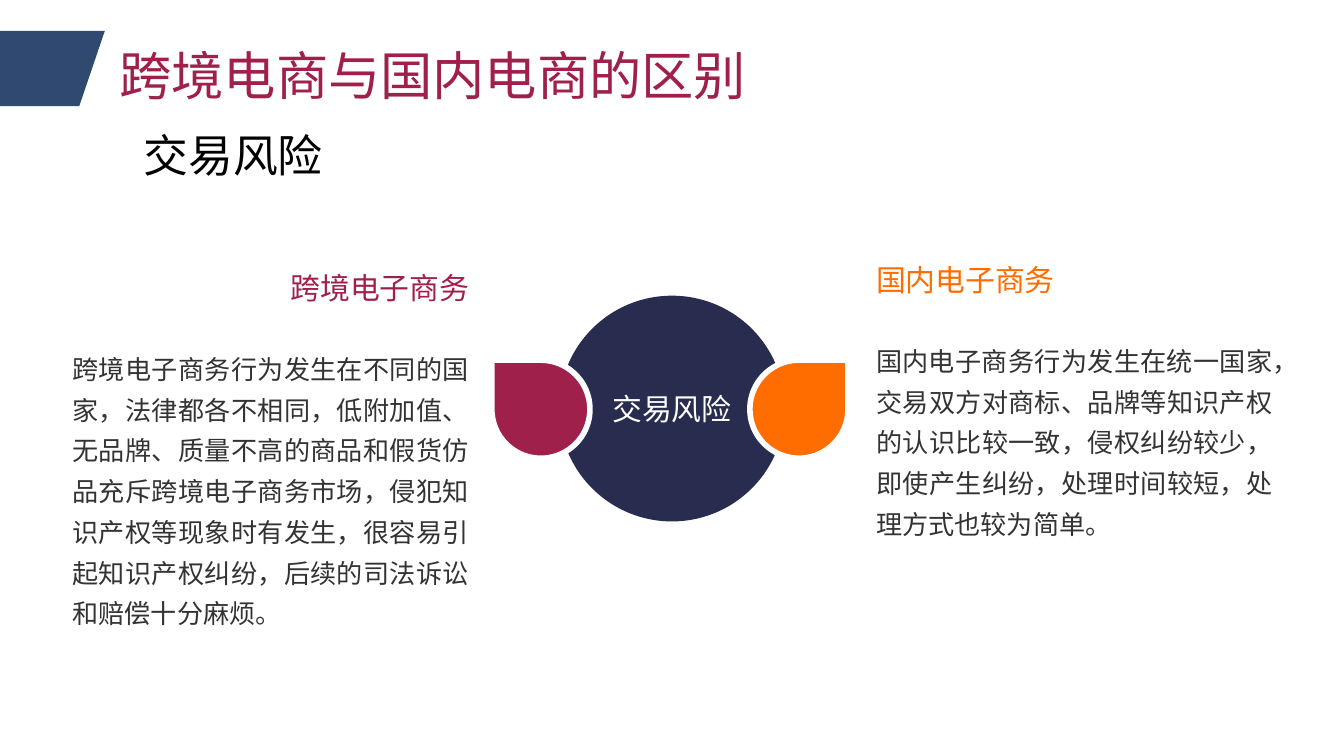
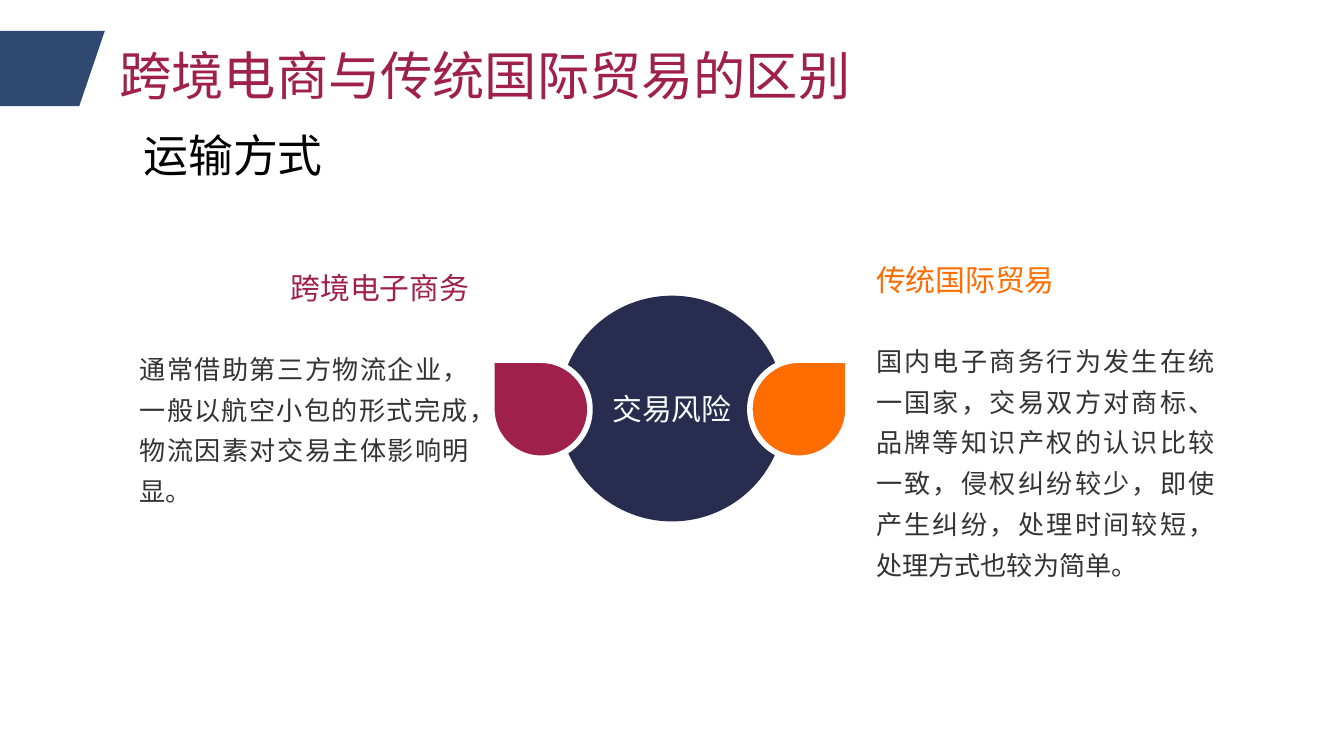
from lxml import etree
from pptx import Presentation
from pptx.dml.color import RGBColor
from pptx.enum import shapes, text
from pptx.oxml import ns
from pptx.util import Inches, Pt

FONT = "Noto Sans CJK SC"
STEEL, NAVY, RED, ORANGE = "304971", "282D4F", "A0204C", "FF6C00"
WHITE, BLACK, GREY = "FFFFFF", "000000", "333333"
ALIGN = text.PP_ALIGN

CROSS_BORDER = "跨境电子商务"
DOMESTIC_RISK = ("国内电子商务行为发生在统一国家，交易双方对商标、品牌等知识产权的认识比较一致，"
                 "侵权纠纷较少，即使产生纠纷，处理时间较短，处理方式也较为简单。")
CROSS_BORDER_RISK = ("跨境电子商务行为发生在不同的国家，法律都各不相同，低附加值、无品牌、"
                     "质量不高的商品和假货仿品充斥跨境电子商务市场，侵犯知识产权等现象时有发生，"
                     "很容易引起知识产权纠纷，后续的司法诉讼和赔偿十分麻烦。")
CROSS_BORDER_SHIPPING = "通常借助第三方物流企业，一般以航空小包的形式完成，物流因素对交易主体影响明显。"

# Each column: heading, body, body width, body height
SLIDES = [
    dict(title="跨境电商与国内电商的区别", title_w=5.6, subtitle="交易风险",
         left=(CROSS_BORDER, CROSS_BORDER_RISK, 3.15, 2.24),
         right=("国内电子商务", DOMESTIC_RISK, 3.15, 1.63)),
    dict(title="跨境电商与传统国际贸易的区别", title_w=6.56, subtitle="运输方式",
         left=(CROSS_BORDER, CROSS_BORDER_SHIPPING, 2.65, 1.32),
         right=("传统国际贸易", DOMESTIC_RISK, 2.72, 1.93)),
]


def rgb(color):
    return RGBColor.from_string(color)


def write(sp, words, size, color, align=ALIGN.LEFT, spacing=1.0,
          anchor=text.MSO_ANCHOR.TOP):
    """Fill a shape with one formatted paragraph."""
    tf = sp.text_frame
    tf.word_wrap = True
    tf.auto_size = text.MSO_AUTO_SIZE.NONE
    tf.vertical_anchor = anchor
    p = tf.paragraphs[0]
    p.alignment, p.line_spacing = align, spacing
    r = p.add_run()
    r.text = words
    r.font.size, r.font.name = Pt(size), FONT
    r.font.color.rgb = rgb(color)
    etree.SubElement(r.font._element, ns.qn("a:ea"), typeface=FONT)


def add_text(s, words, x, y, w, h, **fmt):
    sp = s.shapes.add_textbox(Inches(x), Inches(y), Inches(w), Inches(h))
    write(sp, words, **fmt)


def paint(sp, fill, line=None):
    sp.shadow.inherit = False
    sp.fill.solid()
    sp.fill.fore_color.rgb = rgb(fill)
    if line:
        sp.line.color.rgb = rgb(line)
        sp.line.width = Pt(3)
    else:
        sp.line.fill.background()


def add_shape(s, kind, x, y, size, fill, line=None):
    sp = s.shapes.add_shape(kind, Inches(x), Inches(y), Inches(size), Inches(size))
    paint(sp, fill, line)
    return sp


def add_header(s, title, title_w, subtitle, y=0.23):
    """Slanted band at the left edge, with the title and subtitle beside it."""
    h = 0.56
    outline = s.shapes.build_freeform(0, Inches(y))
    outline.add_line_segments([(Inches(px), Inches(py)) for px, py in
                               ((0.78, y), (0.59, y + h), (0, y + h))], close=True)
    paint(outline.convert_to_shape(), STEEL)
    sp = s.shapes.title
    sp.left, sp.top, sp.width, sp.height = map(Inches, (0.79, y + 0.04, title_w, 0.57))
    write(sp, title, 28, RED)
    add_text(s, subtitle, 0.97, y + 0.67, 2.66, 0.5, size=24, color=BLACK)


def add_hub(s, label, x=4.16, y=2.2):
    """Central disc flanked by two drops that point outwards."""
    disc, drop = 1.68, 0.73
    sp = add_shape(s, shapes.MSO_SHAPE.OVAL, x, y, disc, NAVY)
    write(sp, label, 16, WHITE, ALIGN.CENTER, anchor=text.MSO_ANCHOR.MIDDLE)
    for dx, color, angle in ((1.42, ORANGE, 0), (-0.5, RED, 270)):
        sp = add_shape(s, shapes.MSO_SHAPE.TEAR, x + dx, y + 0.48, drop, color, WHITE)
        sp.rotation = angle


def add_column(s, heading, body, w, h, x, y, heading_w, color, align):
    """Heading over body; x is the edge that both share, on the aligned side."""
    def left(width):
        return x - width if align == ALIGN.RIGHT else x

    add_text(s, heading, left(heading_w), y, heading_w, 0.37, size=16, color=color,
             align=align)
    add_text(s, body, left(w), y + 0.55, w, h, size=14, color=GREY,
             align=ALIGN.JUSTIFY, spacing=1.3)


def add_comparison(prs, title, title_w, subtitle, left, right):
    s = prs.slides.add_slide(prs.slide_layouts[5])
    add_header(s, title, title_w, subtitle)
    add_hub(s, "交易风险")
    add_column(s, *right, x=6.42, y=1.9, heading_w=2.15, color=ORANGE, align=ALIGN.LEFT)
    add_column(s, *left, x=3.59, y=1.96, heading_w=1.61, color=RED, align=ALIGN.RIGHT)


def main():
    prs = Presentation()
    prs.slide_width = Inches(10)
    prs.slide_height = prs.slide_width * 9 // 16
    for content in SLIDES:
        add_comparison(prs, **content)
    prs.save("out.pptx")


if __name__ == "__main__":
    main()
